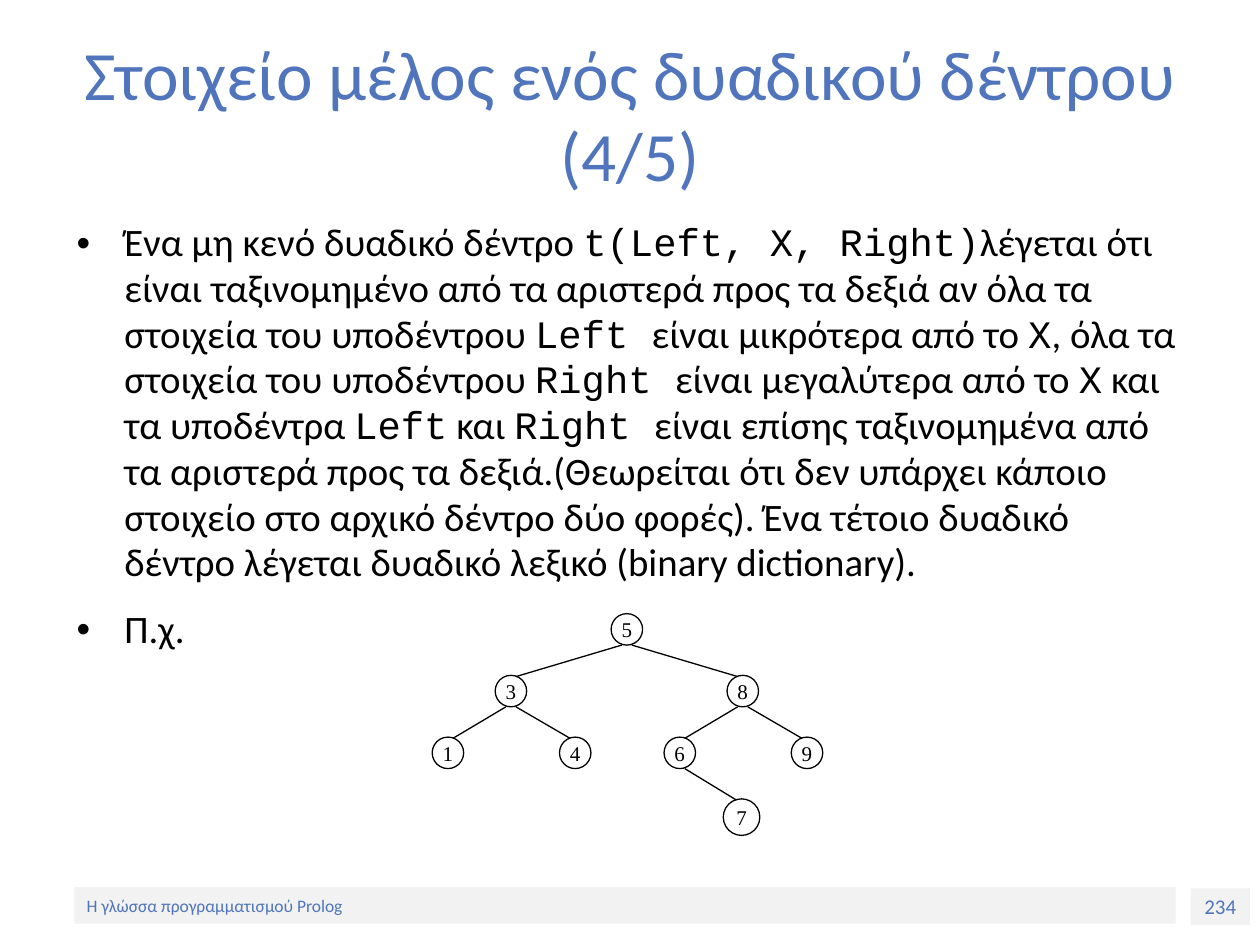
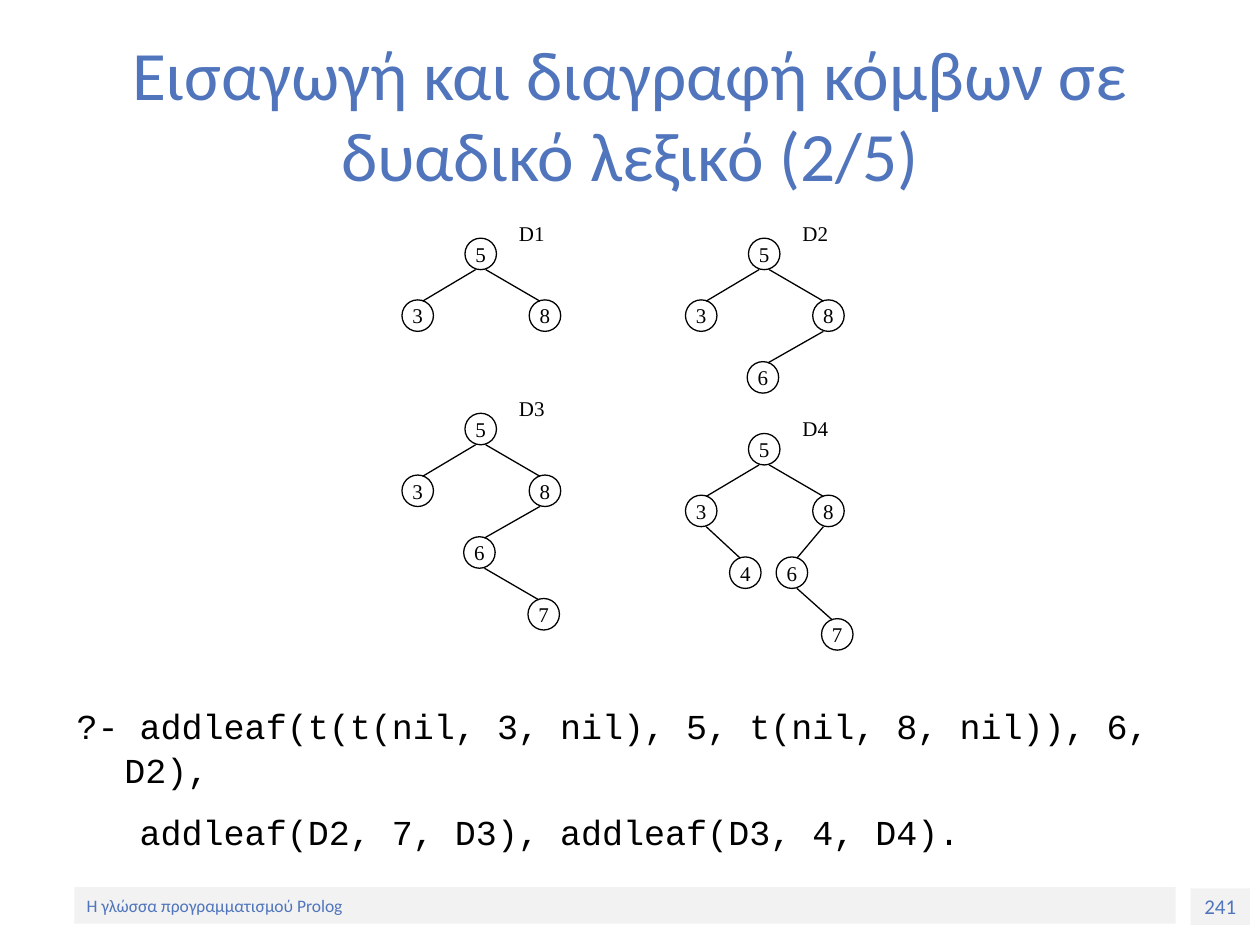
from lxml import etree
from pptx import Presentation
from pptx.dml.color import RGBColor
from pptx.enum.shapes import MSO_CONNECTOR, MSO_SHAPE
from pptx.enum.text import MSO_ANCHOR, PP_ALIGN
from pptx.oxml.ns import qn
from pptx.util import Inches, Pt

RECT, OVAL = MSO_SHAPE.RECTANGLE, MSO_SHAPE.OVAL
LINE = MSO_CONNECTOR.STRAIGHT
LEFT, MID = PP_ALIGN.LEFT, PP_ALIGN.CENTER
TOP, CENTRE = MSO_ANCHOR.TOP, MSO_ANCHOR.MIDDLE

COLORS = {"blue": "5075BC", "band": "F2F2F2", "ink": "000000"}
SANS, MONO, SERIF = "Calibri", "Courier New", "Times New Roman"
FOOTER = "Η γλώσσα προγραμματισμού Prolog"

STYLES = {
    "title": dict(name=SANS, size=39.6, color="blue"),
    "footer": dict(name=SANS, size=10, color="blue"),
    "number": dict(name=SANS, size=12, color="blue"),
    "body": dict(name=SANS, size=22.2, color="ink"),
    "code": dict(name=MONO, size=22.2, color="ink"),
    "query": dict(name=MONO, size=20, color="ink"),
    "node": dict(name=SERIF, size=12, color="ink"),
}

# Each tree: label, left and top of the root, then node: (parent, step right, size).
SIZE, DROP, LEAN = 0.25, 0.49, 0.04
PAIR = {"3": ("5", -0.5, SIZE), "8": ("5", 0.51, SIZE)}
CHAIN = {**PAIR, "6": ("8", -0.52, SIZE)}

# In the body, code stands between backticks.
SLIDES = [
    dict(
        title="Στοιχείο μέλος ενός δυαδικού δέντρου (4/5)",
        number="234",
        box=(0.51, 1.7, 9, 3.43),
        style="body", bullet=True, before=12, spacing=0.98,
        body=[
            "Ένα μη κενό δυαδικό δέντρο `t(Left, X, Right)`λέγεται ότι είναι "
            "ταξινομημένο από τα αριστερά προς τα δεξιά αν όλα τα στοιχεία του "
            "υποδέντρου `Left `είναι μικρότερα από το `X`, όλα τα στοιχεία του "
            "υποδέντρου `Right `είναι μεγαλύτερα από το `X` και τα υποδέντρα "
            "`Left` και `Right `είναι επίσης ταξινομημένα από τα αριστερά προς τα "
            "δεξιά.(Θεωρείται ότι δεν υπάρχει κάποιο στοιχείο στο αρχικό δέντρο "
            "δύο φορές). Ένα τέτοιο δυαδικό δέντρο λέγεται δυαδικό λεξικό "
            "(binary dictionary).",
            "Π.χ.",
        ],
        trees=[
            ("", 4.85, 4.87, {
                "3": ("5", -0.92, SIZE), "8": ("5", 0.92, SIZE),
                "1": ("3", -0.5, SIZE), "4": ("3", 0.51, SIZE),
                "6": ("8", -0.5, SIZE), "9": ("8", 0.51, SIZE),
                "7": ("6", 0.47, 0.29)}),
        ],
    ),
    dict(
        title="Εισαγωγή και διαγραφή κόμβων σε δυαδικό λεξικό (2/5)",
        number="241",
        box=(0.51, 5.52, 9, 1.16),
        style="query", bullet=False, before=10, spacing=1.06,
        body=[
            "?- addleaf(t(t(nil, 3, nil), 5, t(nil, 8, nil)), 6, D2),",
            "   addleaf(D2, 7, D3), addleaf(D3, 4, D4).",
        ],
        trees=[
            ("D1", 3.69, 1.89, PAIR),
            ("D2", 5.94, 1.89, CHAIN),
            ("D3", 3.69, 3.28, {**CHAIN, "7": ("6", 0.51, SIZE)}),
            ("D4", 5.94, 3.44, {
                **PAIR, "4": ("3", 0.35, SIZE),
                "6": ("8", -0.29, SIZE), "7": ("6", 0.36, SIZE)}),
        ],
    ),
]


def rgb(name):
    return RGBColor.from_string(COLORS[name])


def add_run(para, text, style):
    run = para.add_run()
    run.text = text
    look = STYLES[style]
    values = dict(name=look["name"], size=Pt(look["size"]))
    for key, value in values.items():
        setattr(run.font, key, value)
    run.font.color.rgb = rgb(look["color"])


def set_text(shape, text, style, align=LEFT, anchor=CENTRE, wrap=True):
    frame = shape.text_frame
    frame.word_wrap = wrap
    frame.vertical_anchor = anchor
    para = frame.paragraphs[0]
    para.alignment = align
    add_run(para, text, style)
    return frame


def add_box(slide, box):
    return slide.shapes.add_textbox(*map(Inches, box))


def add_form(slide, kind, box, fill=None):
    """Add a filled shape without outline, or a hollow one with a thin outline."""
    form = slide.shapes.add_shape(kind, *map(Inches, box))
    form.shadow.inherit = False
    if fill:
        form.fill.solid()
        form.fill.fore_color.rgb = rgb(fill)
        form.line.fill.background()
    else:
        form.fill.background()
        form.line.color.rgb = rgb("ink")
        form.line.width = Pt(0.75)
    return form


def add_frame(slide, title, number):
    """Draw the title and the footer bands."""
    band = add_form(slide, RECT, (9.45, 7.05, 0.47, 0.29), "band")
    frame = set_text(band, number, "number", MID, wrap=False)
    frame.margin_left = frame.margin_right = 0
    band = add_form(slide, RECT, (0.59, 7.04, 8.74, 0.29), "band")
    set_text(band, FOOTER, "footer")
    head = add_box(slide, (0.5, 0.3, 9, 1.25))
    set_text(head, title, "title", MID).paragraphs[0].line_spacing = 0.97


def add_body(slide, page):
    frame = add_box(slide, page["box"]).text_frame
    frame.word_wrap = True
    for i, text in enumerate(page["body"]):
        para = frame.paragraphs[0] if i == 0 else frame.add_paragraph()
        para.line_spacing = page["spacing"]
        if i:
            para.space_before = Pt(page["before"])
        props = para._p.get_or_add_pPr()
        props.set("marL", str(Inches(0.38)))
        props.set("indent", str(Inches(-0.38)))
        if page["bullet"]:
            font = etree.SubElement(props, qn("a:buFont"))
            font.set("typeface", "Arial")
            etree.SubElement(props, qn("a:buChar")).set("char", "•")
        for j, part in enumerate(text.split("`")):
            add_run(para, part, "code" if j % 2 else page["style"])


def add_node(slide, key, x, y, size):
    oval = add_form(slide, OVAL, (x, y, size, size))
    frame = set_text(oval, key, "node", MID, wrap=False)
    for side in ("left", "right", "top", "bottom"):
        setattr(frame, f"margin_{side}", 0)


def add_edge(slide, *ends):
    edge = slide.shapes.add_connector(LINE, *map(Inches, ends))
    edge.line.color.rgb = rgb("ink")
    edge.line.width = Pt(0.75)
    etree.SubElement(edge._element.spPr, qn("a:effectLst"))


def add_tree(slide, label, x, y, links):
    spots = {"5": (x, y, SIZE)}
    for key, (parent, step, size) in links.items():
        left, top, wide = spots[parent]
        spots[key] = (left + step, top + DROP, size)
        lean = LEAN if step > 0 else -LEAN
        add_edge(slide, left + wide / 2 + lean, top + wide,
                 left + step + size / 2 - lean, top + DROP + 0.01)
    for key, spot in spots.items():
        add_node(slide, key, *spot)
    if label:
        tag = add_box(slide, (x + 0.33, y - 0.19, 0.42, 0.3))
        set_text(tag, label, "node", anchor=TOP, wrap=False)


def main():
    deck = Presentation()
    deck.slide_width, deck.slide_height = Inches(10), Inches(7.5)
    for page in SLIDES:
        slide = deck.slides.add_slide(deck.slide_layouts[6])
        add_frame(slide, page["title"], page["number"])
        add_body(slide, page)
        for tree in page["trees"]:
            add_tree(slide, *tree)
    deck.save("out.pptx")


if __name__ == "__main__":
    main()
